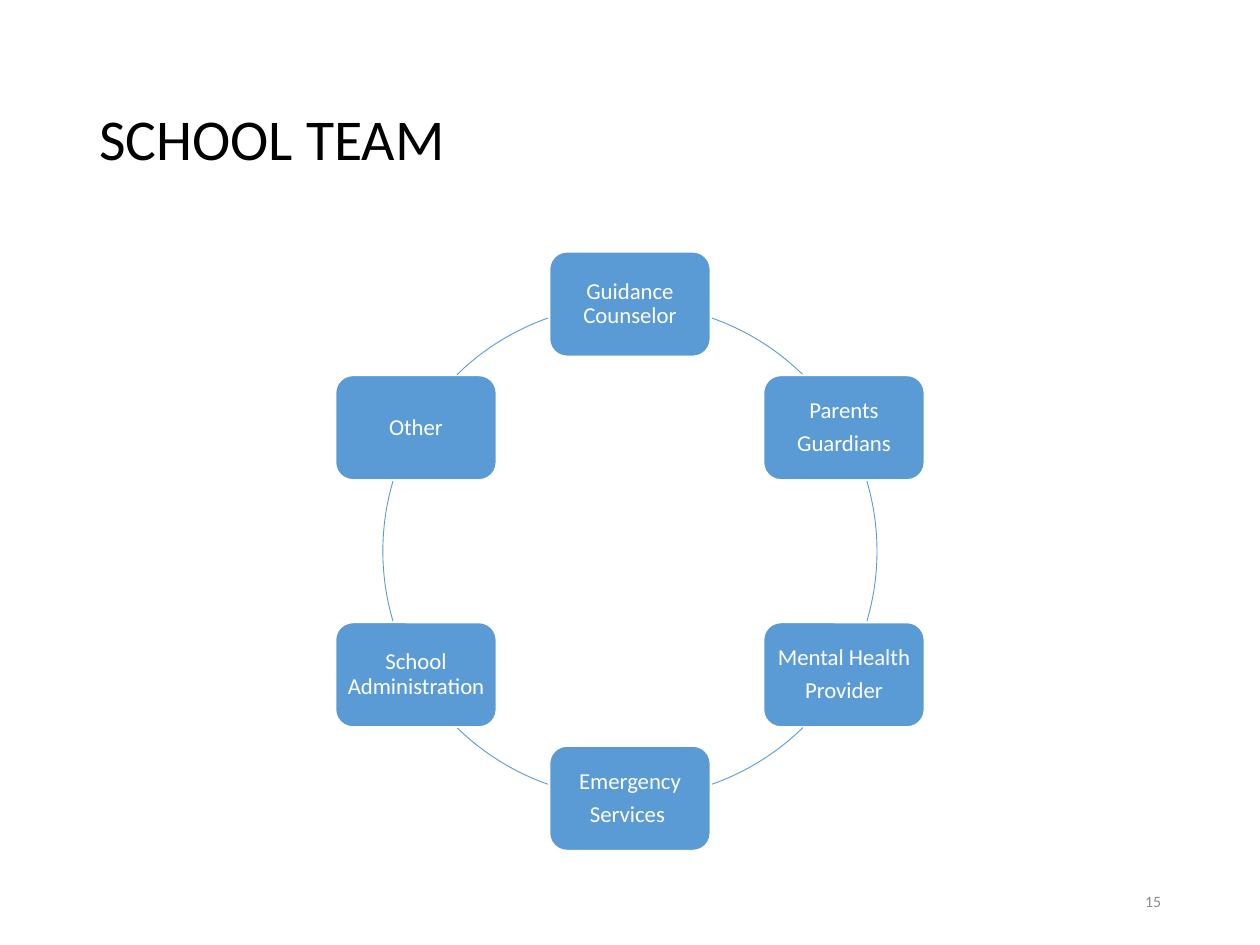
from math import cos, sin, radians
from pptx import Presentation
from pptx.dml.color import RGBColor
from pptx.enum.shapes import MSO_SHAPE
from pptx.enum.text import MSO_ANCHOR, PP_ALIGN
from pptx.util import Pt

HUES = {"text": "000000", "box": "5B9BD5", "white": "FFFFFF", "gray": "8C8C8C"}


def hue(name):
    return RGBColor.from_string(HUES[name])


def style(para, size, color, align):
    para.font.name = "Calibri"
    para.font.size = Pt(size)
    para.font.color.rgb = hue(color)
    para.alignment = align


deck = Presentation()
deck.slide_width, deck.slide_height = Pt(720), Pt(540)
slide = deck.slides.add_slide(deck.slide_layouts[5])
shapes = slide.shapes

title = shapes.title
title.left, title.top, title.width, title.height = Pt(49.5), Pt(28.8), Pt(621), Pt(104.4)
title.text_frame.text = "SCHOOL TEAM"
title.text_frame.vertical_anchor = MSO_ANCHOR.MIDDLE
head = title.text_frame.paragraphs[0]
head.line_spacing = 0.9
style(head, 33, "text", PP_ALIGN.LEFT)

team = [
    ["Guidance Counselor"],
    ["Parents", "Guardians"],
    ["Mental Health", "Provider"],
    ["Emergency", "Services "],
    ["School Administration"],
    ["Other"],
]
arcs = [(301.9, 12.55), (0, 16.5), (58.1, 12.55), (121.9, 12.55), (180, 16.5), (238.1, 12.55)]
mid_x, mid_y, radius = 360, 315, 141.2
wide, high = 92, 59.8

for step, (lines, (mid, half)) in enumerate(zip(team, arcs)):
    turn = radians(60 * step - 90)
    left = mid_x + radius * cos(turn) - wide / 2
    top = mid_y + radius * sin(turn) - high / 2
    box = shapes.add_shape(MSO_SHAPE.ROUNDED_RECTANGLE, Pt(left), Pt(top), Pt(wide), Pt(high))
    box.shadow.inherit = False
    box.fill.solid()
    box.fill.fore_color.rgb = hue("box")
    box.line.color.rgb = hue("white")
    box.line.width = Pt(1)
    frame = box.text_frame
    frame.word_wrap = True
    frame.vertical_anchor = MSO_ANCHOR.MIDDLE
    frame.margin_left = frame.margin_right = Pt(3.6)
    frame.margin_top = frame.margin_bottom = Pt(3.6)
    frame.text = "\n".join(lines)
    for para in frame.paragraphs:
        para.line_spacing = 0.9
        para.space_after = Pt(4.6)
        style(para, 13, "white", PP_ALIGN.CENTER)

    arc = shapes.add_shape(MSO_SHAPE.ARC, Pt(mid_x - radius), Pt(mid_y - radius),
                           Pt(2 * radius), Pt(2 * radius))
    arc.shadow.inherit = False
    arc.adjustments[0] = (mid - half) % 360 * 0.6
    arc.adjustments[1] = (mid + half) % 360 * 0.6
    arc.fill.background()
    arc.line.color.rgb = hue("box")
    arc.line.width = Pt(0.5)

page = shapes.add_textbox(Pt(508.5), Pt(500.5), Pt(162), Pt(28.75)).text_frame
page.word_wrap = True
page.vertical_anchor = MSO_ANCHOR.MIDDLE
page.text = "15"
style(page.paragraphs[0], 9, "gray", PP_ALIGN.RIGHT)

deck.save("out.pptx")
